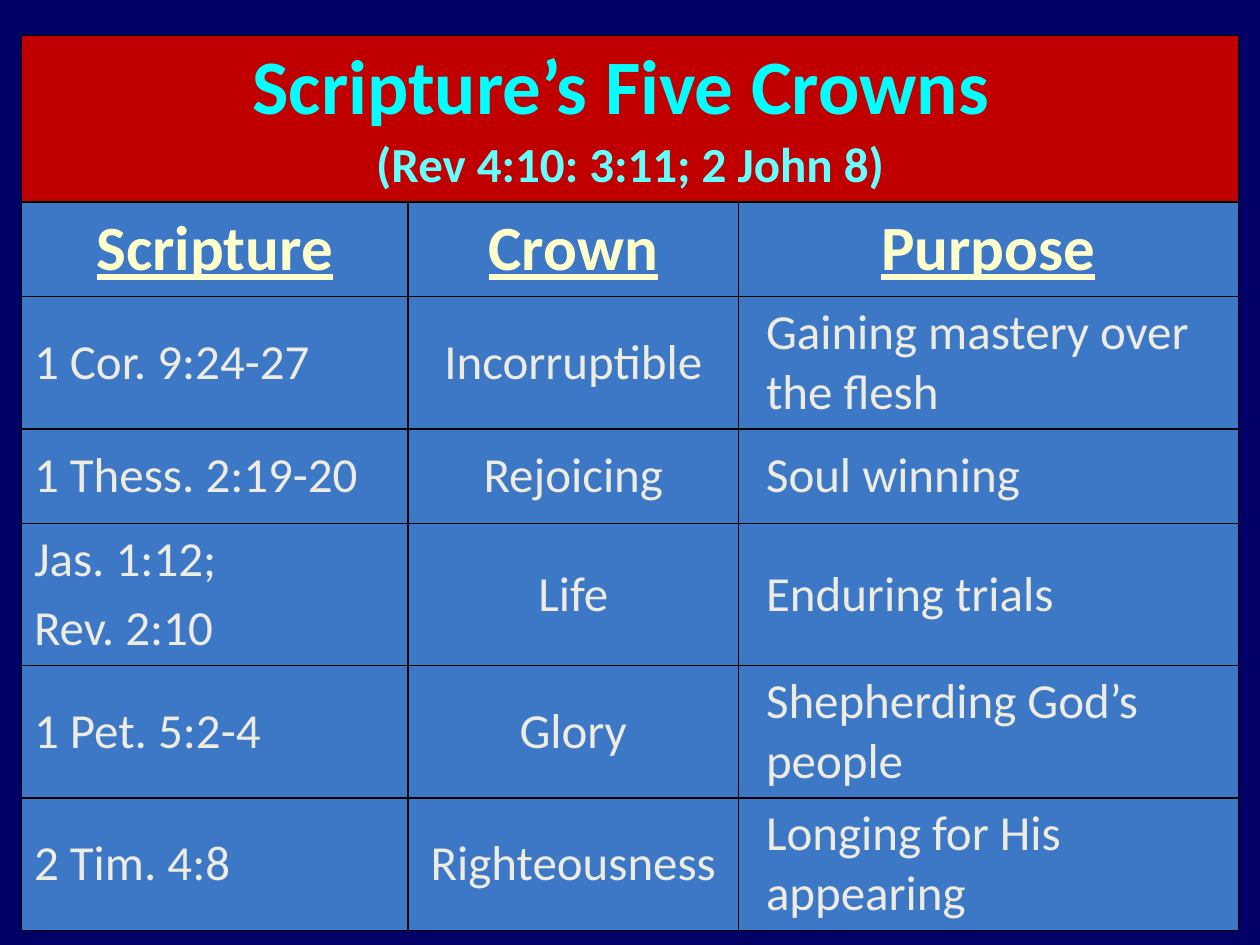
from lxml import etree
from pptx import Presentation
from pptx.dml.color import RGBColor
from pptx.enum.text import MSO_ANCHOR, PP_ALIGN
from pptx.oxml.ns import qn
from pptx.util import Inches, Pt

LEFT, CENTER = PP_ALIGN.LEFT, PP_ALIGN.CENTER
MIDDLE = MSO_ANCHOR.MIDDLE

THEME = {
    "font": "Calibri",
    "background": "000066",
    "banner": "C00000",
    "cell": "3C78C6",
    "border": "000000",
    "border_width": 1,
    "title": {"size": 44, "color": "00FFFF", "bold": True},
    "subtitle": {"size": 28, "color": "66FFFF", "bold": True},
    "header": {"size": 36, "color": "FFFFCC", "bold": True, "underline": True},
    "body": {"size": 28, "color": "EEECE1"},
}

TITLE = "Scripture’s Five Crowns "
SUBTITLE = "(Rev 4:10: 3:11; 2 John 8)"
HEADERS = ["Scripture", "Crown", "Purpose"]
CROWNS = [
    (["1 Cor. 9:24-27"], ["Incorruptible"], ["Gaining mastery over the flesh"]),
    (["1 Thess. 2:19-20"], ["Rejoicing"], ["Soul winning"]),
    (["Jas. 1:12;", "Rev. 2:10"], ["Life"], ["Enduring trials"]),
    (["1 Pet. 5:2-4"], ["Glory"], ["Shepherding God’s people"]),
    (["2 Tim. 4:8"], ["Righteousness"], ["Longing for His appearing"]),
]
COLUMN_WIDTHS = [3.07, 2.62, 3.97]
ROW_HEIGHTS = [0.75, 0.75, 0.9, 0.75, 0.75, 0.9, 0.9]
COLUMN_FORMATS = [(LEFT, 0), (CENTER, 0), (LEFT, 0.12)]


def add_text(paragraph, text, size, color, bold=False, underline=False,
             align=CENTER, indent=0):
    paragraph.alignment = align
    if indent:
        properties = paragraph._p.get_or_add_pPr()
        properties.set("marL", str(Inches(indent)))
        properties.set("indent", "0")
    run = paragraph.add_run()
    run.text = text
    font = run.font
    font.name = THEME["font"]
    font.size = Pt(size)
    font.bold = bold
    font.underline = underline
    font.color.rgb = RGBColor.from_string(color)


def style_cell(cell, color):
    properties = cell._tc.get_or_add_tcPr()
    for side in ("lnL", "lnR", "lnT", "lnB"):
        line = etree.SubElement(properties, qn(f"a:{side}"),
                                w=str(Pt(THEME["border_width"])))
        fill = etree.SubElement(line, qn("a:solidFill"))
        etree.SubElement(fill, qn("a:srgbClr"), val=THEME["border"])
    cell.fill.solid()
    cell.fill.fore_color.rgb = RGBColor.from_string(color)
    cell.vertical_anchor = MIDDLE


def main():
    presentation = Presentation()
    presentation.slide_width, presentation.slide_height = Inches(10), Inches(7.5)
    slide = presentation.slides.add_slide(presentation.slide_layouts[6])
    slide.background.fill.solid()
    slide.background.fill.fore_color.rgb = RGBColor.from_string(THEME["background"])

    table = slide.shapes.add_table(
        len(ROW_HEIGHTS), len(COLUMN_WIDTHS),
        Inches(0.17), Inches(0.28), Inches(sum(COLUMN_WIDTHS)), Inches(7.03)).table
    table.first_row = table.horz_banding = False
    for column, width in zip(table.columns, COLUMN_WIDTHS):
        column.width = Inches(width)
    for index, (row, height) in enumerate(zip(table.rows, ROW_HEIGHTS)):
        row.height = Inches(height)
        for cell in row.cells:
            style_cell(cell, THEME["cell"] if index else THEME["banner"])

    banner = table.cell(0, 0)
    banner.merge(table.cell(0, len(COLUMN_WIDTHS) - 1))
    paragraph = banner.text_frame.paragraphs[0]
    add_text(paragraph, TITLE, **THEME["title"])
    paragraph.add_line_break()
    add_text(paragraph, SUBTITLE, **THEME["subtitle"])

    for column, header in enumerate(HEADERS):
        add_text(table.cell(1, column).text_frame.paragraphs[0], header, **THEME["header"])

    for row, crown in enumerate(CROWNS, start=2):
        for column, (lines, (align, indent)) in enumerate(zip(crown, COLUMN_FORMATS)):
            frame = table.cell(row, column).text_frame
            for number, text in enumerate(lines):
                paragraph = frame.add_paragraph() if number else frame.paragraphs[0]
                if number:
                    paragraph.space_before = Pt(0.2 * THEME["body"]["size"])
                add_text(paragraph, text, align=align, indent=indent, **THEME["body"])

    presentation.save("out.pptx")


if __name__ == "__main__":
    main()
